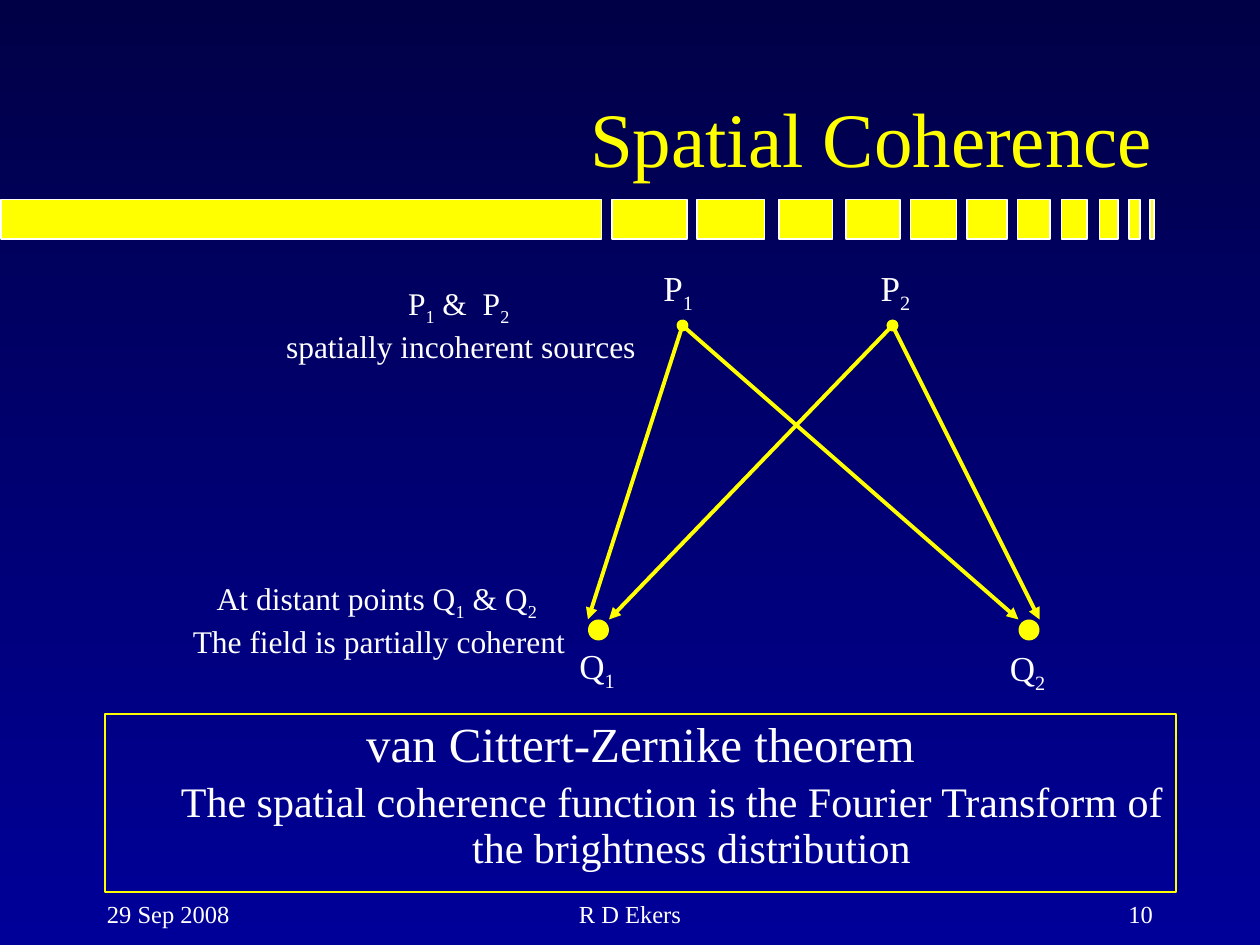
from dataclasses import dataclass
from itertools import product

from lxml.etree import SubElement
from pptx import Presentation
from pptx.dml.color import RGBColor as RGB
from pptx.enum.shapes import MSO_CONNECTOR as Connector, MSO_SHAPE as Shape
from pptx.enum.text import MSO_ANCHOR as Anchor, MSO_AUTO_SIZE as AutoSize, PP_ALIGN as Align
from pptx.oxml.ns import qn
from pptx.util import Inches, Pt


@dataclass(frozen=True)
class Theme:
    font: str = "Times New Roman"
    accent: RGB = RGB(0xFF, 0xFF, 0x00)
    text: RGB = RGB(0xFF, 0xFF, 0xFF)
    top: RGB = RGB(0x00, 0x00, 0x47)
    bottom: RGB = RGB(0x00, 0x00, 0x99)
    title: int = 44
    theorem: int = 28
    statement: int = 24
    label: int = 20
    caption: int = 18
    footer: int = 14


THEME = Theme()

# The grid has 12 units to the inch: 120 columns by 90 rows
COLUMNS, ROWS, UNIT = 120, 90, Inches(1) // 12

# Left edge and width of each bar of the title band, in columns
BARS = [(0.1, 57.2), (58.3, 7.1), (66.4, 6.4), (74.2, 5.1), (80.6, 5.1), (86.7, 4.4),
        (92.1, 3.8), (96.9, 3.1), (101.1, 2.4), (104.7, 1.8), (107.5, 1.1), (109.5, 0.4)]


def grid(*cells):
    return [round(cell * UNIT) for cell in cells]


def apply(target, **values):
    for name, value in values.items():
        setattr(target, name, value)


def write(paragraph, pieces, size, color=THEME.text, align=Align.LEFT):
    """Write pieces that alternate between normal text and subscript."""
    paragraph.alignment = align
    for index, piece in enumerate(pieces):
        run = paragraph.add_run()
        run.text = piece
        apply(run.font, name=THEME.font, size=Pt(size))
        run.font.color.rgb = color
        if index % 2:
            run.font._element.set("baseline", "-25000")


def set_frame(shape, wrap=True, anchor=Anchor.TOP):
    frame = shape.text_frame
    apply(frame, word_wrap=wrap, auto_size=AutoSize.NONE, vertical_anchor=anchor,
          margin_left=Inches(0.1), margin_right=Inches(0.1),
          margin_top=Inches(0.05), margin_bottom=Inches(0.05))
    return frame


def add_text(slide, cells, lines, size, align=Align.LEFT, wrap=True):
    frame = set_frame(slide.shapes.add_textbox(*grid(*cells)), wrap)
    for index, pieces in enumerate(lines):
        paragraph = frame.add_paragraph() if index else frame.paragraphs[0]
        write(paragraph, pieces, size, align=align)


def add_shape(slide, kind, cells, fill=None, line=None):
    shape = slide.shapes.add_shape(kind, *grid(*cells))
    shape.shadow.inherit = False
    for part, color in ((shape.fill, fill), (shape.line.fill, line)):
        if color is None:
            part.background()
        else:
            part.solid()
            part.fore_color.rgb = color
    if line is not None:
        shape.line.width = Pt(1)
    return shape


def add_ray(slide, start, end):
    ray = slide.shapes.add_connector(Connector.STRAIGHT, *grid(*start, *end))
    ray.line.color.rgb = THEME.accent
    ray.line.width = Pt(2.25)
    line = ray.line._get_or_add_ln()
    for tag, kind in (("a:headEnd", "oval"), ("a:tailEnd", "triangle")):
        SubElement(line, qn(tag), type=kind)
    SubElement(ray._element.spPr, qn("a:effectLst"))


def add_background(slide):
    fill = slide.background.fill
    fill.gradient()
    fill.gradient_angle = 270
    for stop, color, position in zip(fill.gradient_stops, (THEME.top, THEME.bottom), (0, 1)):
        stop.color.rgb = color
        stop.position = position


def add_title(slide, text):
    title = slide.shapes.title
    left, top, width, height = grid(9, 2.5, 102, 15.5)
    apply(title, left=left, top=top, width=width, height=height)
    frame = set_frame(title, anchor=Anchor.BOTTOM)
    write(frame.paragraphs[0], [text], THEME.title, THEME.accent, Align.RIGHT)


def add_theorem(slide, name, statement):
    box = add_shape(slide, Shape.RECTANGLE, (10, 68, 102, 17), line=THEME.accent)
    frame = set_frame(box)
    rows = [(name, THEME.theorem, 0.38, -0.38), (statement, THEME.statement, 0.81, -0.31)]
    for index, (text, size, margin, indent) in enumerate(rows):
        paragraph = frame.add_paragraph() if index else frame.paragraphs[0]
        write(paragraph, [text], size, align=Align.CENTER)
        apply(paragraph, line_spacing=0.9, space_before=Pt(0.2 * size))
        properties = paragraph._p.get_or_add_pPr()
        properties.set("marL", str(Inches(margin)))
        properties.set("indent", str(Inches(indent)))


def add_diagram(slide):
    # Rays from each source to the near corner of each distant point
    sources = [(65, 31), (85, 31)]
    ends = [[(56, 59), (97, 59)], [(58, 59), (99, 59)]]
    for source, point in product(range(2), range(2)):
        add_ray(slide, sources[source], ends[source][point])
    for left in (56, 97):
        add_shape(slide, Shape.OVAL, (left, 59, 2, 2), fill=THEME.accent)

    labels = [("P", "1", 62, 24.8), ("P", "2", 82.7, 24.8),
              ("Q", "1", 54, 60.8), ("Q", "2", 95, 61)]
    for letter, number, left, top in labels:
        add_text(slide, (left, top, 5.8, 5.2), [[letter, number]], THEME.label, wrap=False)


def main():
    presentation = Presentation()
    apply(presentation, slide_width=COLUMNS * UNIT, slide_height=ROWS * UNIT)
    slide = presentation.slides.add_slide(presentation.slide_layouts[5])
    add_background(slide)

    # Title and its band of narrowing bars
    for left, width in BARS:
        add_shape(slide, Shape.RECTANGLE, (left, 19, width, 3.75), THEME.accent, THEME.text)
    add_title(slide, "Spatial Coherence")

    # Footer
    for text, left, width, align in [("29 Sep 2008", 9, 25, Align.LEFT),
                                     ("R D Ekers", 41, 38, Align.CENTER),
                                     ("10", 86, 25, Align.RIGHT)]:
        add_text(slide, (left, 85, width, 6), [[text]], THEME.footer, align)

    # Theorem, ray diagram and captions
    add_theorem(slide, "van Cittert-Zernike theorem",
                "The spatial coherence function is the Fourier Transform of "
                "the brightness distribution")
    add_diagram(slide)
    captions = [
        (23.8, 26.5, [["P", "1", " &  P", "2 "], ["spatially incoherent sources"]]),
        (16, 54.6, [["At distant points Q", "1", " & Q", "2 "],
                    ["The field is partially coherent"]]),
    ]
    for left, top, lines in captions:
        add_text(slide, (left, top, 40.2, 8.4), lines, THEME.caption, Align.CENTER)

    presentation.save("out.pptx")


if __name__ == "__main__":
    main()
